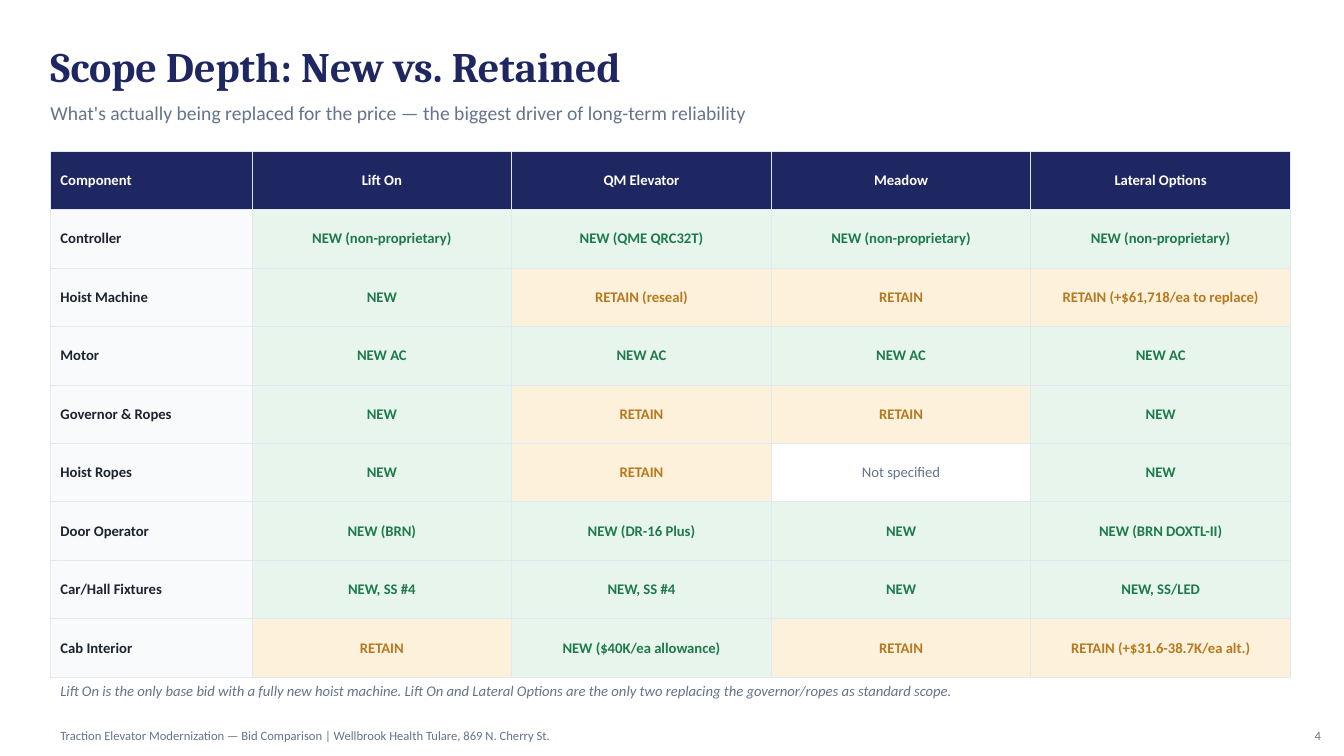
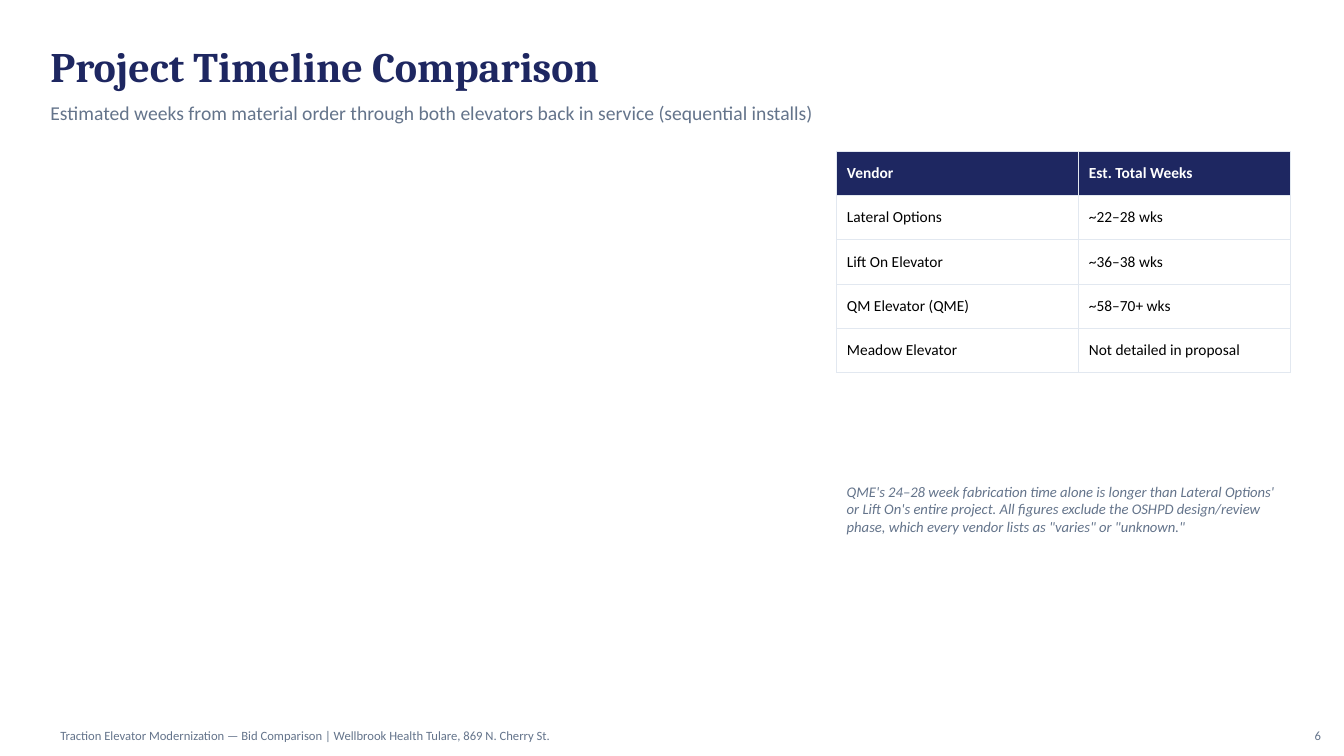
import pptx
import pptx.dml.color
import pptx.enum.text
import pptx.oxml
import pptx.oxml.ns
import pptx.util

PX = 9144  # EMU per px, 100 px to the inch
NAVY, SLATE, INK, GRID = "1E2761", "64748B", "1E2331", "E2E8F0"
WHITE, BLACK = "FFFFFF", "000000"
FOOTER = "Traction Elevator Modernization — Bid Comparison | Wellbrook Health Tulare, 869 N. Cherry St."

# Cell styles: fill, text colour, bold
HEADER = (NAVY, WHITE, True)
LABEL = ("F8FAFC", INK, True)
PLAIN = (WHITE, BLACK, False)
MUTED = (WHITE, SLATE, False)
STATUS = {"NEW": ("E8F5EC", "1E7A4C", True), "RETAIN": ("FDF1DC", "B7791F", True)}

LEFT = pptx.enum.text.PP_ALIGN.LEFT
CENTER = pptx.enum.text.PP_ALIGN.CENTER
RIGHT = pptx.enum.text.PP_ALIGN.RIGHT
MIDDLE = pptx.enum.text.MSO_ANCHOR.MIDDLE
rgb = pptx.dml.color.RGBColor.from_string

SLIDES = [
    {
        "title": "Scope Depth: New vs. Retained",
        "subtitle": "What's actually being replaced for the price — the biggest driver of long-term reliability",
        "number": "4",
        "left": 50, "widths": [200] + [(1230 - 200) / 4] * 4, "row_height": 58,
        "size": 10.5, "align": CENTER, "label": LABEL, "body": MUTED,
        "rows": [
            ["Component", "Lift On", "QM Elevator", "Meadow", "Lateral Options"],
            ["Controller", "NEW (non-proprietary)", "NEW (QME QRC32T)", "NEW (non-proprietary)",
             "NEW (non-proprietary)"],
            ["Hoist Machine", "NEW", "RETAIN (reseal)", "RETAIN", "RETAIN (+$61,718/ea to replace)"],
            ["Motor", "NEW AC", "NEW AC", "NEW AC", "NEW AC"],
            ["Governor & Ropes", "NEW", "RETAIN", "RETAIN", "NEW"],
            ["Hoist Ropes", "NEW", "RETAIN", "Not specified", "NEW"],
            ["Door Operator", "NEW (BRN)", "NEW (DR-16 Plus)", "NEW", "NEW (BRN DOXTL-II)"],
            ["Car/Hall Fixtures", "NEW, SS #4", "NEW, SS #4", "NEW", "NEW, SS/LED"],
            ["Cab Interior", "RETAIN", "NEW ($40K/ea allowance)", "RETAIN",
             "RETAIN (+$31.6-38.7K/ea alt.)"],
        ],
        "note": "Lift On is the only base bid with a fully new hoist machine. Lift On and Lateral Options "
                "are the only two replacing the governor/ropes as standard scope.",
        "note_box": (50, 665, 1230, 40),
    },
    {
        "title": "Project Timeline Comparison",
        "subtitle": "Estimated weeks from material order through both elevators back in service (sequential installs)",
        "number": "6",
        "left": 830, "widths": [240, 210], "row_height": 44,
        "size": 11, "align": LEFT, "label": PLAIN, "body": PLAIN,
        "rows": [
            ["Vendor", "Est. Total Weeks"],
            ["Lateral Options", "~22–28 wks"],
            ["Lift On Elevator", "~36–38 wks"],
            ["QM Elevator (QME)", "~58–70+ wks"],
            ["Meadow Elevator", "Not detailed in proposal"],
        ],
        "note": "QME's 24–28 week fabrication time alone is longer than Lateral Options' or Lift On's "
                "entire project. All figures exclude the OSHPD design/review phase, which every vendor "
                "lists as \"varies\" or \"unknown.\"",
        "note_box": (830, 390, 450, 230),
    },
]


def write(tf, text, size, color, bold=False, italic=False, align=LEFT, font="Calibri"):
    p = tf.paragraphs[0]
    p.alignment = align
    r = p.add_run()
    r.text = text
    r.font.name = font
    r.font.size = pptx.util.Pt(size)
    r.font.bold = bold
    r.font.italic = italic
    r.font.color.rgb = rgb(color)


def style_cell(cell, fill, color):
    """Give a cell its fill and four thin borders; borders precede the fill in the XML."""
    tcPr = cell._tc.get_or_add_tcPr()
    for side in "LRTB":
        tcPr.append(pptx.oxml.parse_xml(
            f'<a:ln{side} {pptx.oxml.ns.nsdecls("a")} w="9525"><a:solidFill>'
            f'<a:srgbClr val="{color}"/></a:solidFill></a:ln{side}>'))
    cell.fill.solid()
    cell.fill.fore_color.rgb = rgb(fill)
    cell.vertical_anchor = MIDDLE


prs = pptx.Presentation()
prs.slide_width = 1333 * PX
prs.slide_height = 750 * PX

for page in SLIDES:
    s = prs.slides.add_slide(prs.slide_layouts[5])

    title = s.shapes.title
    title.left, title.top, title.width, title.height = [n * PX for n in (50, 35, 1230, 60)]
    tf = title.text_frame
    tf.auto_size = pptx.enum.text.MSO_AUTO_SIZE.NONE
    tf.vertical_anchor = MIDDLE
    tf.margin_left = tf.margin_top = tf.margin_right = tf.margin_bottom = 0
    write(tf, page["title"], 30, NAVY, bold=True, font="Cambria")

    rows, widths = page["rows"], page["widths"]
    frame = s.shapes.add_table(len(rows), len(widths), page["left"] * PX, 150 * PX,
                               int(sum(widths) * PX), len(rows) * page["row_height"] * PX)
    table = frame.table
    table.first_row = table.horz_banding = False
    for column, width in zip(table.columns, widths):
        column.width = int(width * PX)
    for i, row in enumerate(rows):
        table.rows[i].height = page["row_height"] * PX
        for j, text in enumerate(row):
            if i == 0:
                fill, color, bold = HEADER
            elif j == 0:
                fill, color, bold = page["label"]
            else:
                fill, color, bold = STATUS.get(text.split()[0].strip(","), page["body"])
            cell = table.cell(i, j)
            style_cell(cell, fill, GRID)
            write(cell.text_frame, text, page["size"], color, bold,
                  align=page["align"] if j else LEFT)

    # Box, text, size, italic, alignment, side margin, top margin
    for box, text, size, italic, align, side, top in [
        ((50, 92, 1230, 40), page["subtitle"], 14, False, LEFT, 0, 0),
        (page["note_box"], page["note"], 10.5, True, LEFT, 10, 5),
        ((50, 715, 1050, 30), FOOTER, 9, False, LEFT, 10, 5),
        ((1260, 715, 60, 30), page["number"], 9, False, RIGHT, 10, 5),
    ]:
        sp = s.shapes.add_textbox(*[n * PX for n in box])
        tf = sp.text_frame
        tf.word_wrap = True
        tf.vertical_anchor = MIDDLE
        tf.margin_left = tf.margin_right = side * PX
        tf.margin_top = tf.margin_bottom = top * PX
        write(tf, text, size, SLATE, italic=italic, align=align)

prs.save("out.pptx")
